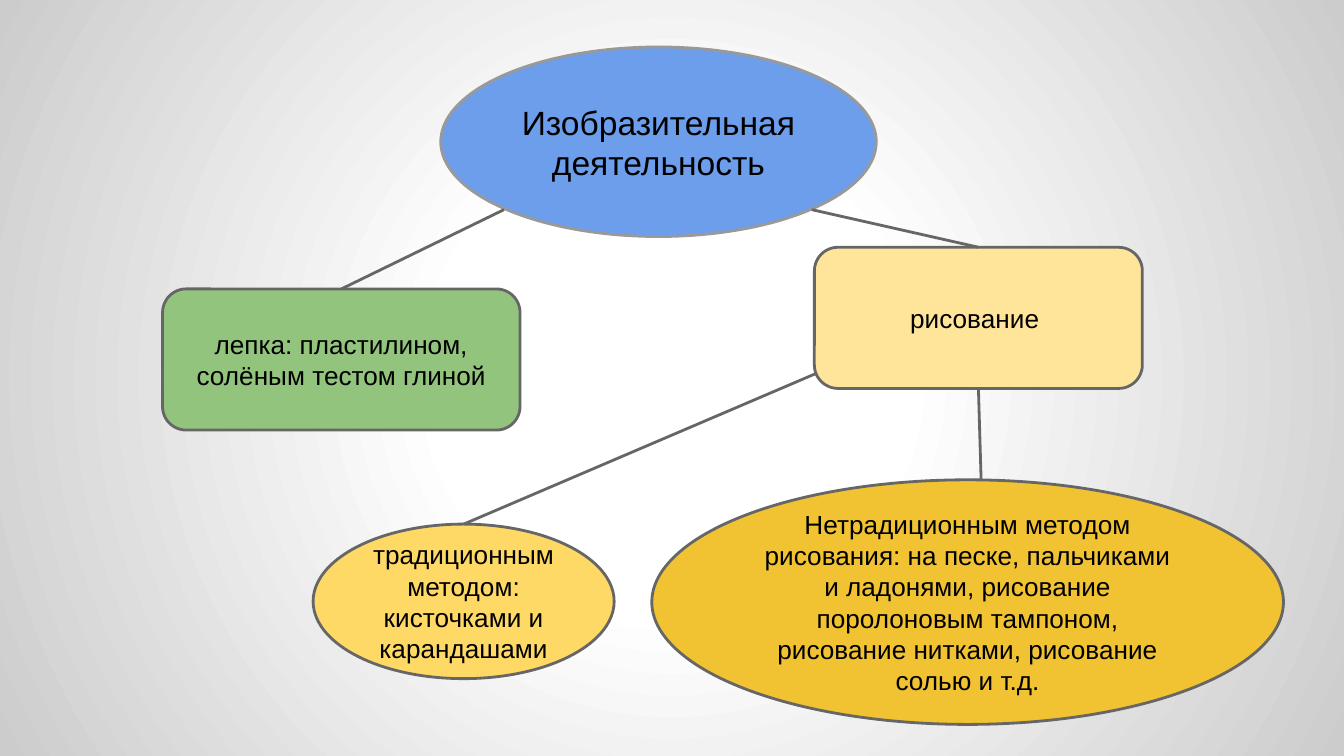
import pptx
import pptx.dml.color
import pptx.enum.shapes
import pptx.enum.text
import pptx.oxml
import pptx.oxml.ns
import pptx.util
from pptx.util import Inches

THEME = {
    "font": "Arial", "text": "000000", "line": "666666", "title_line": "999999",
    "blue": "6D9EEB", "green": "93C47D", "cream": "FFE599",
    "yellow": "FFD966", "gold": "F1C232",
    "glow": "FFFFFF", "edge": "CCCCCC",
    "title_size": 18, "body_size": 14, "line_width": 1.5,
}
OVAL = pptx.enum.shapes.MSO_SHAPE.OVAL
ROUNDED = pptx.enum.shapes.MSO_SHAPE.ROUNDED_RECTANGLE


def rgb(name):
    return pptx.dml.color.RGBColor.from_string(THEME[name])


def set_line(line, color):
    line.color.rgb = rgb(color)
    line.width = pptx.util.Pt(THEME["line_width"])


# Page in 16:9
deck = pptx.Presentation()
deck.slide_width, deck.slide_height = Inches(10), Inches(10 * 9 / 16)
page = deck.slides.add_slide(deck.slide_layouts[6])

# Background: radial gradient, white in the middle
stops = "".join(
    f'<a:gs pos="{percent * 1000}"><a:srgbClr val="{THEME[name]}"/></a:gs>'
    for percent, name in [(0, "glow"), (30, "glow"), (100, "edge")])
background = pptx.oxml.parse_xml(
    f'<p:bg {pptx.oxml.ns.nsdecls("p", "a")}><p:bgPr><a:gradFill>'
    f'<a:gsLst>{stops}</a:gsLst><a:path path="circle">'
    '<a:fillToRect l="50000" t="50000" r="50000" b="50000"/></a:path>'
    '</a:gradFill><a:effectLst/></p:bgPr></p:bg>')
page.element.cSld.insert(0, background)

# Boxes: kind, place, fill, line, text size, space around, text
boxes = {
    "activity": (OVAL, (3.28, 0.35, 3.24, 1.41), "blue", "title_line", "title_size", 0,
                 "Изобразительная деятельность"),
    "modelling": (ROUNDED, (1.21, 2.15, 2.66, 1.05), "green", "line", "body_size", 0,
                  "лепка: пластилином, солёным тестом глиной"),
    "drawing": (ROUNDED, (6.06, 1.84, 2.44, 1.05), "cream", "line", "body_size", 0,
                "рисование "),
    "traditional": (OVAL, (2.33, 3.9, 2.24, 1.15), "yellow", "line", "body_size", 0,
                    "традиционным методом: кисточками и карандашами"),
    "untraditional": (OVAL, (4.85, 3.57, 4.7, 1.82), "gold", "line", "body_size", 4,
                      "Нетрадиционным методом рисования: на песке, пальчиками и ладонями, "
                      "рисование поролоновым тампоном, рисование нитками, рисование солью и т.д."),
}
frame_format = {
    "word_wrap": True, "vertical_anchor": pptx.enum.text.MSO_ANCHOR.MIDDLE,
    **{f"margin_{side}": Inches(0.1) for side in ("left", "top", "right", "bottom")},
}
shapes = {}
for name, (kind, place, fill, line, size, space, text) in boxes.items():
    box = page.shapes.add_shape(kind, *map(Inches, place))
    box.shadow.inherit = False
    box.fill.solid()
    box.fill.fore_color.rgb = rgb(fill)
    set_line(box.line, line)
    para = box.text_frame.paragraphs[0]
    span = para.add_run()
    span.text = text
    span.font.color.rgb = rgb("text")
    gap = pptx.util.Pt(space)
    para_format = {"alignment": pptx.enum.text.PP_ALIGN.CENTER,
                   "space_before": gap, "space_after": gap}
    font_format = {"name": THEME["font"], "size": pptx.util.Pt(THEME[size])}
    for target, values in [(box.text_frame, frame_format), (para, para_format),
                           (span.font, font_format)]:
        for key, value in values.items():
            setattr(target, key, value)
    shapes[name] = box

# Connectors: start, end, joined start, joined end as (box, side)
links = [
    ((3.75, 1.56), (2.54, 2.15), None, ("modelling", 0)),
    ((6.04, 1.56), (7.28, 1.84), None, ("drawing", 0)),
    ((6.07, 2.78), (3.45, 3.9), None, ("traditional", 0)),
    ((7.28, 2.89), (7.3, 3.57), ("drawing", 2), None),
]
for start, end, start_joint, end_joint in links:
    link = page.shapes.add_connector(pptx.enum.shapes.MSO_CONNECTOR.STRAIGHT,
                                     *map(Inches, start + end))
    for joint, connect in [(start_joint, link.begin_connect), (end_joint, link.end_connect)]:
        if joint:
            connect(shapes[joint[0]], joint[1])
    set_line(link.line, "line")
    link.element.spPr.append(
        pptx.oxml.parse_xml(f'<a:effectLst {pptx.oxml.ns.nsdecls("a")}/>'))

deck.save("out.pptx")
